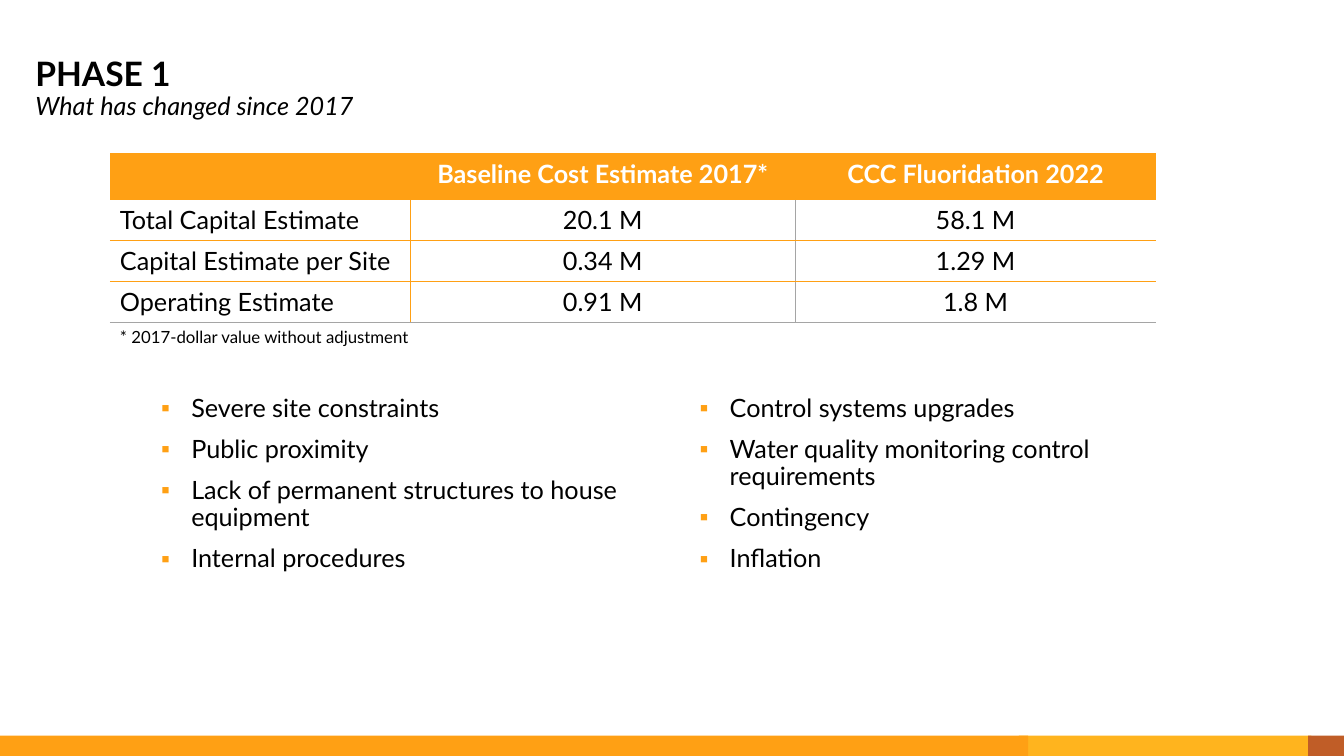
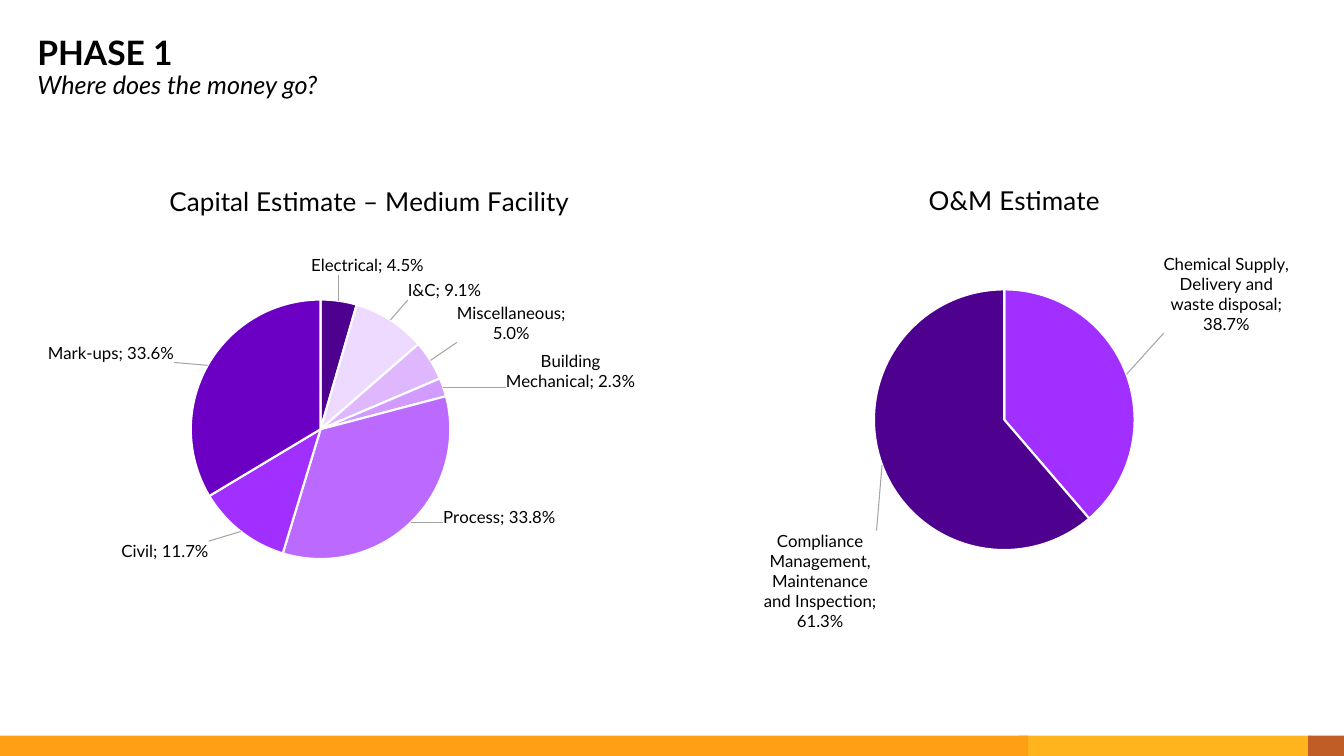
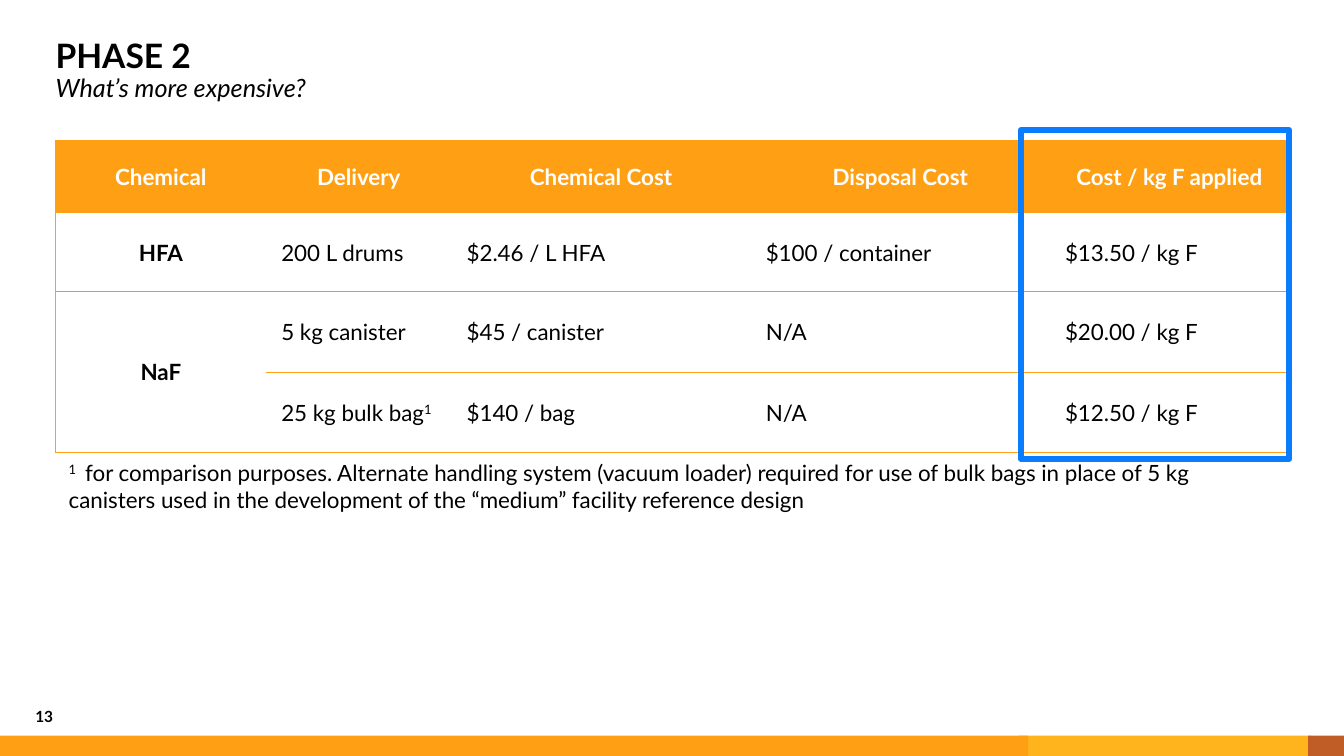
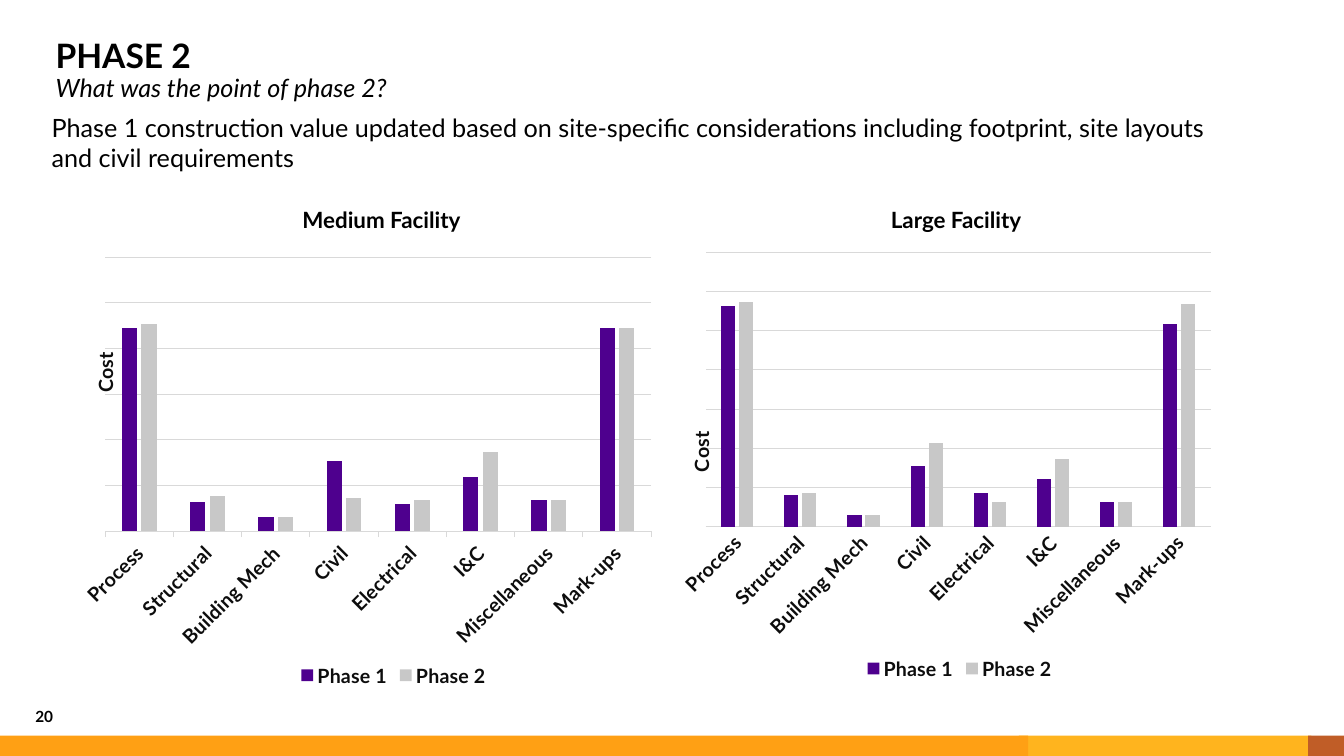
from copy import deepcopy
from dataclasses import dataclass

from pptx import Presentation, oxml
from pptx import util as u
from pptx.chart.data import CategoryChartData
from pptx.dml.color import RGBColor
from pptx.enum import chart as charts, shapes, text
from pptx.oxml import ns

Cm, Pt = u.Cm, u.Pt
NO_GRID = "{2D5ABB26-0587-4C30-8999-92F81FD0307C}"
LEFT, CENTER = text.PP_ALIGN.LEFT, text.PP_ALIGN.CENTER
TOP, MIDDLE, BOTTOM = text.MSO_ANCHOR.TOP, text.MSO_ANCHOR.MIDDLE, text.MSO_ANCHOR.BOTTOM


@dataclass(frozen=True)
class Theme:
    """Fonts, type sizes and colours of the presentation."""
    font: str = "Lato"
    title: float = 24
    chart_title: float = 18.6
    body: float = 18
    cell: float = 16
    axis: float = 14
    small: float = 12
    number: float = 11
    ink: str = "000000"
    soft_ink: str = "0D0D0D"
    white: str = "FFFFFF"
    orange: str = "FFA014"
    amber: str = "FFB41E"
    rust: str = "C05D27"
    blue: str = "0A7DFF"
    purple: str = "4E008E"
    violet: str = "A12FFF"
    silver: str = "C8C8C8"
    grey: str = "A5A5A5"
    grid: str = "D9D9D9"


THEME = Theme()


def rgb(colour):
    """Turn a hex string into a colour."""
    return RGBColor.from_string(colour)


def xml(markup):
    """Make an element from markup in the chart and drawing namespaces."""
    return oxml.parse_xml(f"<c:root {ns.nsdecls('a', 'c')}>{markup}</c:root>")[0]


def place(part, x, y, w=None, h=None, after=None, inner=False):
    """Give a chart part a manual position in fractions of the chart."""
    for old in part.findall(ns.qn("c:layout")):
        part.remove(old)
    target = '<c:layoutTarget val="inner"/>' if inner else ""
    sizes = "" if w is None else f'<c:w val="{w:.4f}"/><c:h val="{h:.4f}"/>'
    modes = '<c:xMode val="edge"/><c:yMode val="edge"/>'
    layout = xml(f"<c:layout><c:manualLayout>{target}{modes}"
                 f'<c:x val="{x:.4f}"/><c:y val="{y:.4f}"/>{sizes}</c:manualLayout></c:layout>')
    previous = part.find(ns.qn(after)) if after else None
    part.insert(0 if previous is None else part.index(previous) + 1, layout)


class Deck:
    """Holds the style and the current slide, and draws each kind of element."""

    def __init__(self, theme):
        """Start an empty widescreen presentation."""
        self.theme = theme
        self.deck = Presentation()
        self.deck.slide_width, self.deck.slide_height = Cm(33.87), Cm(19.05)
        self.slide = None

    def style(self, font, colour=None, **values):
        """Apply the theme font and any overrides to a font."""
        defaults = {"name": self.theme.font, "size": self.theme.body, "bold": False}
        for name, value in (defaults | values).items():
            setattr(font, name, Pt(value) if name == "size" else value)
        font.color.rgb = rgb(colour or self.theme.ink)

    def compose(self, paragraph, *runs, **layout):
        """Fill a paragraph with (text, style) runs; a newline breaks the line."""
        for name, value in layout.items():
            setattr(paragraph, name, value)
        run = None
        for words, values in runs:
            if words == "\n":
                paragraph.add_line_break()
                paragraph._p[-1].insert(0, deepcopy(run._r.get_or_add_rPr()))
                continue
            values = dict(values)
            raised = values.pop("raised", False)
            run = paragraph.add_run()
            run.text = words
            self.style(run.font, **values)
            if raised:
                run._r.get_or_add_rPr().set("baseline", "30000")

    def bullet(self, paragraph, char=None):
        """Set or remove the bullet of a paragraph."""
        properties = paragraph._p.get_or_add_pPr()
        indent = Cm(0.76) if char else 0
        for name, value in {"marL": indent, "indent": -indent}.items():
            properties.set(name, str(value))
        if char:
            properties.append(xml(f'<a:buClr><a:srgbClr val="{self.theme.orange}"/></a:buClr>'))
            properties.append(xml(f'<a:buChar char="{char}"/>'))
        else:
            properties.append(xml("<a:buNone/>"))

    def frame(self, holder, box, anchor=TOP):
        """Place a text holder and return its frame without margins."""
        for name, value in zip(("left", "top", "width", "height"), box):
            setattr(holder, name, Cm(value))
        frame = holder.text_frame
        values = {"margin_left": 0, "margin_top": 0, "margin_right": 0, "margin_bottom": 0,
                  "word_wrap": True, "auto_size": text.MSO_AUTO_SIZE.NONE,
                  "vertical_anchor": anchor}
        for name, value in values.items():
            setattr(frame, name, value)
        return frame

    def box(self, left, top, width, height, fill=None, line=None, weight=0):
        """Draw a plain rectangle."""
        shape = self.slide.shapes.add_shape(
            shapes.MSO_SHAPE.RECTANGLE, Cm(left), Cm(top), Cm(width), Cm(height))
        shape.shadow.inherit = False
        for part, colour in ((shape.fill, fill), (shape.line.fill, line)):
            if colour:
                part.solid()
                part.fore_color.rgb = rgb(colour)
            else:
                part.background()
        if line:
            shape.line.width = Pt(weight)
        return shape

    def bands(self):
        """Put the bottom colour bands on the slide master."""
        t = self.theme
        for left, width, colour in ((25.68, 7.37, t.amber), (32.97, 0.9, t.rust), (0, 25.91, t.orange)):
            band = self.box(left, 18.54, width, 0.51, fill=colour)
            self.deck.slide_master.shapes._spTree.append(band._element)

    def new_slide(self, layout, phase, question, left, top, number=None):
        """Add a slide with its two-line title and page number."""
        self.slide = self.deck.slides.add_slide(self.deck.slide_layouts.get_by_name(layout))
        if len(self.deck.slides) == 1:
            self.bands()
        frame = self.frame(self.slide.shapes.title, (left, top, 32, 1.78), MIDDLE)
        self.compose(frame.paragraphs[0], (phase, {"size": self.theme.title, "bold": True}),
                     ("\n", {}), (question, {"italic": True}), alignment=LEFT, line_spacing=0.9)
        if number:
            self.note(number, (0.89, 17.53, 2.16, 0.76), BOTTOM, size=self.theme.number, bold=True)

    def note(self, words, box, anchor=TOP, **values):
        """Add a free text box."""
        holder = self.slide.shapes.add_textbox(0, 0, 0, 0)
        self.compose(self.frame(holder, box, anchor).paragraphs[0], (words, values))

    def body(self, index, box, *runs, anchor=TOP, **layout):
        """Fill a body placeholder with one plain paragraph."""
        paragraph = self.frame(self.slide.placeholders[index], box, anchor).paragraphs[0]
        self.compose(paragraph, *runs, **layout)
        self.bullet(paragraph)

    def bullets(self, index, box, items):
        """Fill a body placeholder with a bulleted list."""
        frame = self.frame(self.slide.placeholders[index], box)
        for i, item in enumerate(items):
            paragraph = frame.add_paragraph() if i else frame.paragraphs[0]
            self.compose(paragraph, (item, {}), line_spacing=0.9, space_before=Pt(10))
            self.bullet(paragraph, "▪")

    def table(self, left, top, columns, heights, rows, rules, size, centred, bold_columns=(),
              anchor=TOP, margin=None):
        """Draw a table with an orange header and the given border rules."""
        t = self.theme
        table = self.slide.shapes.add_table(
            len(heights), len(columns), Cm(left), Cm(top), Cm(sum(columns)), Cm(sum(heights))).table
        table._tbl.tblPr.find(ns.qn("a:tableStyleId")).text = NO_GRID
        table.horz_banding = False
        for tracks, name, lengths in ((table.columns, "width", columns), (table.rows, "height", heights)):
            for track, length in zip(tracks, lengths):
                setattr(track, name, Cm(length))
        for side in "LRTB":
            for edge, on_rows, on_columns, colour, weight in rules:
                for r, c in ((r, c) for r in on_rows for c in on_columns if edge == side):
                    table.cell(r, c)._tc.get_or_add_tcPr().append(xml(
                        f'<a:ln{side} w="{Pt(weight)}"><a:solidFill><a:srgbClr val="{colour}"/>'
                        f"</a:solidFill></a:ln{side}>"))
        for r, row in enumerate(rows):
            for c, words in enumerate(row):
                cell, header = table.cell(r, c), r == 0
                cell.vertical_anchor = anchor
                if header:
                    cell.fill.solid()
                    cell.fill.fore_color.rgb = rgb(t.orange)
                elif margin:
                    for edge in ("left", "top", "right", "bottom"):
                        setattr(cell, f"margin_{edge}", Cm(margin))
                look = {"size": size, "bold": header or c in bold_columns,
                        "colour": t.white if header else t.ink}
                runs = [(words, look)] if isinstance(words, str) else [(w, look | v) for w, v in words]
                self.compose(cell.text_frame.paragraphs[0], *(run for run in runs if run[0]),
                             alignment=CENTER if header or c in centred else LEFT)
        return table

    def chart(self, kind, box, categories, series):
        """Add a chart and return it with the theme font."""
        data = CategoryChartData()
        data.categories = categories
        for name, values in series:
            data.add_series(name, values)
        chart = self.slide.shapes.add_chart(kind, *map(Cm, box), data).chart
        self.style(chart.font, size=self.theme.small)
        chart.has_legend = chart.has_title = False
        return chart

    def pie(self, box, title, title_at, centre, diameter, slices):
        """Draw a titled pie from (category, value, colour, label shift) slices."""
        t = self.theme
        names, values, colours, shifts = zip(*slices)
        chart = self.chart(charts.XL_CHART_TYPE.PIE, box, names, [("Series 1", values)])
        chart.has_title = True
        self.compose(chart.chart_title.text_frame.paragraphs[0], (title, {"size": t.chart_title}))
        place(chart.chart_title._element, *title_at, after="c:tx")
        w, h = diameter / box[2], diameter / box[3]
        x, y = (centre[0] - box[0]) / box[2], (centre[1] - box[1]) / box[3]
        place(chart._chartSpace.chart.plotArea, x - w / 2, y - h / 2, w, h, inner=True)
        plot = chart.plots[0]
        plot.vary_by_categories = True
        ring = plot.series[0]
        for i, colour in enumerate(colours):
            piece = ring.points[i].format
            piece.fill.solid()
            piece.fill.fore_color.rgb = rgb(colour)
            piece.line.color.rgb = rgb(t.white)
            piece.line.width = Pt(1.5)
        self.pie_labels(ring, shifts)

    def pie_labels(self, ring, shifts):
        """Label each slice with its category and value, shifted along a leader line."""
        t = self.theme
        number = '<c:numFmt formatCode="0.0%" sourceLinked="0"/>'
        look = (f'<c:txPr><a:bodyPr/><a:p><a:pPr><a:defRPr sz="{t.small * 100}" b="0"><a:solidFill>'
                f'<a:srgbClr val="{t.ink}"/></a:solidFill><a:latin typeface="{t.font}"/>'
                "</a:defRPr></a:pPr><a:endParaRPr/></a:p></c:txPr>")
        flags = {"LegendKey": 0, "Val": 1, "CatName": 1, "SerName": 0, "Percent": 0, "BubbleSize": 0}
        shown = "".join(f'<c:show{name} val="{on}"/>' for name, on in flags.items())
        shared = f'{number}{look}<c:dLblPos val="outEnd"/>{shown}<c:separator>; </c:separator>'
        labels = "".join(
            f'<c:dLbl><c:idx val="{i}"/><c:layout><c:manualLayout><c:x val="{x}"/><c:y val="{y}"/>'
            f"</c:manualLayout></c:layout>{shared}</c:dLbl>" for i, (x, y) in enumerate(shifts))
        leader = ('<c:showLeaderLines val="1"/><c:leaderLines><c:spPr><a:ln w="9525"><a:solidFill>'
                  f'<a:srgbClr val="{t.grey}"/></a:solidFill></a:ln></c:spPr></c:leaderLines>')
        ring._element.find(ns.qn("c:cat")).addprevious(
            xml(f"<c:dLbls>{labels}{shared}{leader}</c:dLbls>"))

    def columns(self, box, categories, series, top_value, steps, plot_at, legend_at, cost_at, tick):
        """Draw a clustered column chart comparing the two phases."""
        t = self.theme
        look = {"size": t.axis, "bold": True, "colour": t.soft_ink}
        chart = self.chart(charts.XL_CHART_TYPE.COLUMN_CLUSTERED, box, categories, series)
        place(chart._chartSpace.chart.plotArea, *plot_at, inner=True)
        plot = chart.plots[0]
        plot.vary_by_categories, plot.gap_width, plot.overlap = False, 219, -27
        for phase, colour in zip(plot.series, (t.purple, t.silver)):
            phase.format.fill.solid()
            phase.format.fill.fore_color.rgb = rgb(colour)
        chart.has_legend = True
        chart.legend.position = charts.XL_LEGEND_POSITION.BOTTOM
        chart.legend.include_in_layout = False
        self.style(chart.legend.font, **look)
        place(chart.legend._element, *legend_at, after="c:legendPos")
        parts, cost = chart.category_axis, chart.value_axis
        parts.major_tick_mark = tick
        self.style(parts.tick_labels.font, **look)
        parts._element.find(ns.qn("c:txPr")).find(ns.qn("a:bodyPr")).set("rot", "-2700000")
        values = {"minimum_scale": 0, "maximum_scale": top_value, "major_unit": top_value / steps,
                  "major_tick_mark": charts.XL_TICK_MARK.NONE, "has_major_gridlines": True,
                  "tick_label_position": charts.XL_TICK_LABEL_POSITION.NONE, "has_title": True}
        for name, value in values.items():
            setattr(cost, name, value)
        cost.format.line.fill.background()
        for line in (parts.format.line, cost.major_gridlines.format.line):
            line.color.rgb = rgb(t.grid)
            line.width = Pt(0.75)
        heading = cost.axis_title.text_frame
        self.compose(heading.paragraphs[0], ("Cost", look))
        heading._txBody.bodyPr.set("rot", "-5400000")
        place(cost.axis_title._element, *cost_at, after="c:tx")


def changes(deck):
    """Build the slide on changes since 2017."""
    t = deck.theme
    deck.new_slide("Two Content", "PHASE 1", "What has changed since 2017", 0.89, 1.35)
    deck.bullets(1, (4.06, 9.96, 12.14, 4.83), (
        "Severe site constraints", "Public proximity",
        "Lack of permanent structures to house equipment", "Internal procedures"))
    deck.bullets(2, (17.63, 9.96, 11.51, 5.28), (
        "Control systems upgrades", "Water quality monitoring control requirements",
        "Contingency", "Inflation"))
    rows = (("", "Baseline Cost Estimate 2017*", "CCC Fluoridation 2022"),
            ("Total Capital Estimate", "20.1 M", "58.1 M"),
            ("Capital Estimate per Site", "0.34 M", "1.29 M"),
            ("Operating Estimate", "0.91 M", "1.8 M"),
            ([("* 2017-dollar value without adjustment", {"size": t.small})],))
    rules = (("R", (1, 2, 3), (0,), t.orange, 1), ("R", (1, 2, 3), (1,), t.grey, 0.75),
             ("B", (1, 2), range(3), t.orange, 1), ("B", (3,), range(3), t.grey, 0.75))
    table = deck.table(2.77, 3.86, (7.57, 9.7, 9.09), (1.17,) + 4 * (1.03,), rows, rules,
                       t.body, centred=(1, 2))
    table.cell(4, 0).merge(table.cell(4, 2))


def money(deck):
    """Build the slide on where the money goes."""
    t = deck.theme
    deck.new_slide("Title Only", "PHASE 1", "Where does the money go?", 0.94, 0.84)
    deck.pie((-0.69, 3.96, 17.93, 12.52), "Capital Estimate – Medium Facility", (0.27, 0.04),
             (8.08, 10.82), 6.54, (
        ("Electrical", 0.045, t.purple, (-0.04, -0.04)),
        ("I&C", 0.091, "EED9FF", (0.02, -0.03)),
        ("Miscellaneous", 0.05, "DEB7FF", (0.03, -0.03)),
        ("Building Mechanical", 0.023, "D29BFF", (0.08, 0.01)),
        ("Process", 0.338, "BB69FF", (0.04, -0.04)),
        ("Civil", 0.117, t.violet, (-0.04, 0.01)),
        ("Mark-ups", 0.336, "6B00C4", (-0.04, 0))))
    deck.pie((17.25, 4.19, 15.88, 12.32), "O&M Estimate", (0.38, 0.02), (25.31, 10.58), 6.57, (
        ("Chemical Supply, Delivery and waste disposal", 0.387, t.violet, (0.05, -0.08)),
        ("Compliance Management, Maintenance and Inspection", 0.613, t.purple, (0, 0.13))))


def expense(deck):
    """Build the slide comparing chemical costs."""
    t = deck.theme
    deck.new_slide("Title and Content", "PHASE 2", "What’s more expensive?", 1.4, 0.91, "13")
    rows = (("Chemical", "Delivery", "Chemical Cost", "Disposal Cost", "Cost / kg F applied"),
            ("HFA", "200 L drums", "$2.46 / L HFA", "$100 / container", "$13.50 / kg F"),
            ("NaF", "5 kg canister", "$45 / canister", "N/A", "$20.00 / kg F"),
            ("", [("25 kg bulk bag", {}), ("1", {"raised": True})], "$140 / bag", "N/A",
             "$12.50 / kg F"))
    rules = (("L", range(4), (0,), t.orange, 1), ("R", range(4), (4,), t.orange, 1),
             ("T", (0,), range(5), t.orange, 1), ("B", (1,), range(5), t.grey, 0.75),
             ("B", (2,), range(5), t.orange, 1), ("B", (3,), range(5), t.orange, 1))
    table = deck.table(1.4, 3.54, (5.31, 4.67, 7.54, 7.54, 6.02), (1.83, 1.98, 2.04, 2.01), rows,
                       rules, t.cell, centred=(0,), bold_columns=(0,), anchor=MIDDLE, margin=0.38)
    table.cell(2, 0).merge(table.cell(3, 0))
    deck.body(1, (1.73, 11.56, 30.43, 2.16), ("1 ", {"size": t.cell, "raised": True}),
              (" for comparison purposes. Alternate handling system (vacuum loader) required for use "
               "of bulk bags in place of 5 kg canisters used in the development of the “medium” "
               "facility reference design", {"size": t.cell}), space_before=Pt(10))
    deck.box(25.73, 3.28, 6.76, 8.28, line=t.blue, weight=4.5)


def purpose(deck):
    """Build the slide on the point of phase 2."""
    t = deck.theme
    deck.new_slide("Two Content", "PHASE 2", "What was the point of phase 2?", 1.4, 0.91, "20")
    deck.note("Phase 1 construction value updated based on site-specific considerations including "
              "footprint, site layouts and civil requirements", (1.3, 2.82, 29.39, 1.55))
    parts = ("Process", "Structural", "Building Mech", "Civil", "Electrical", "I&C",
             "Miscellaneous", "Mark-ups")
    deck.columns((1.75, 6.02, 14.96, 11.51), parts,
                 (("Phase 1", (98, 14, 7, 34, 13, 26, 15, 98)),
                  ("Phase 2", (100, 17, 7, 16, 15, 38, 15, 98))),
                 132, 6, (0.06, 0.04, 0.92, 0.6), (0.38, 0.92), (0.03, 0.24),
                 charts.XL_TICK_MARK.OUTSIDE)
    deck.columns((16.94, 6.02, 14, 11.33), parts,
                 (("Phase 1", (98, 14, 5, 27, 15, 21, 11, 90)),
                  ("Phase 2", (100, 15, 5, 37, 11, 30, 11, 99))),
                 122, 7, (0.06, 0.03, 0.91, 0.61), (0.34, 0.92), (0.02, 0.42),
                 charts.XL_TICK_MARK.NONE)
    for index, left, facility in ((1, 4.98, "Medium Facility"), (2, 19.46, "Large Facility")):
        deck.body(index, (left, 4.85, 9.27, 1.47), (facility, {"size": t.cell, "bold": True}),
                  anchor=MIDDLE, alignment=CENTER, line_spacing=0.9, space_before=Pt(5))


def main():
    """Build and save the presentation."""
    deck = Deck(THEME)
    for build in (changes, money, expense, purpose):
        build(deck)
    deck.deck.save("out.pptx")


if __name__ == "__main__":
    main()
